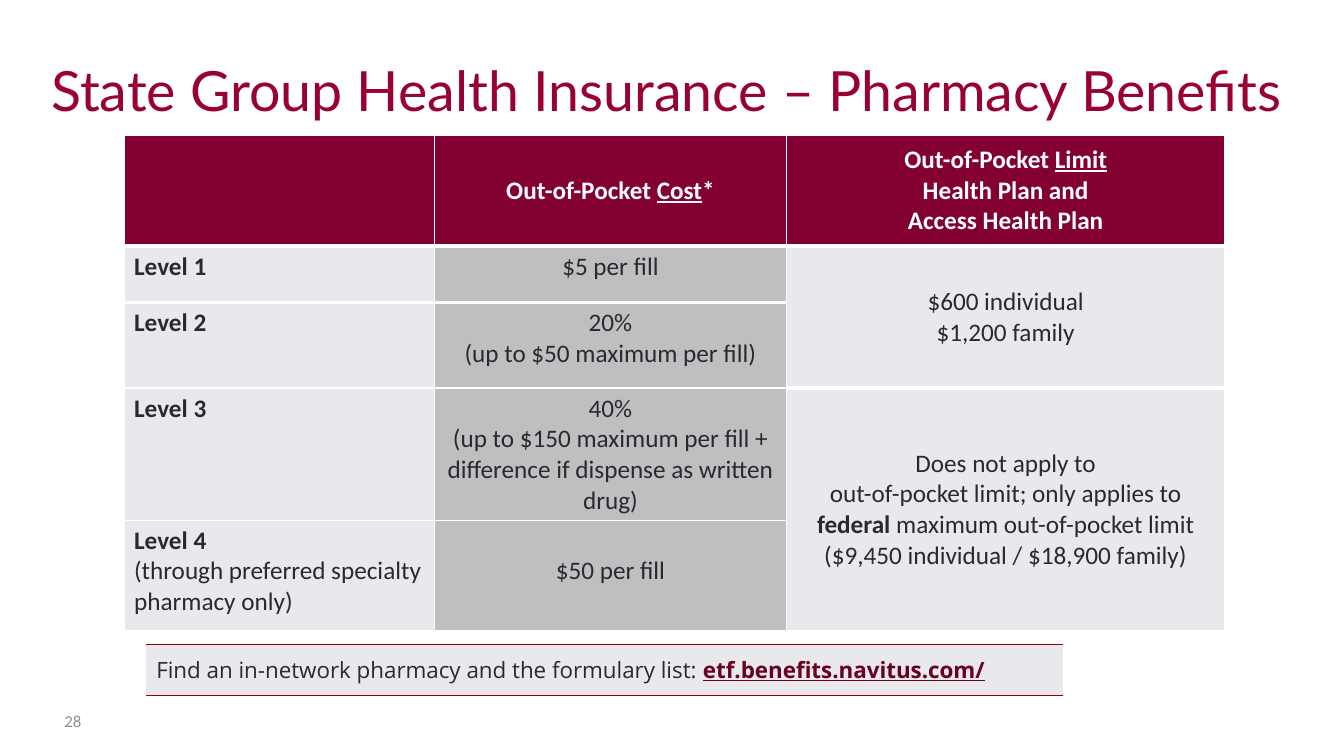
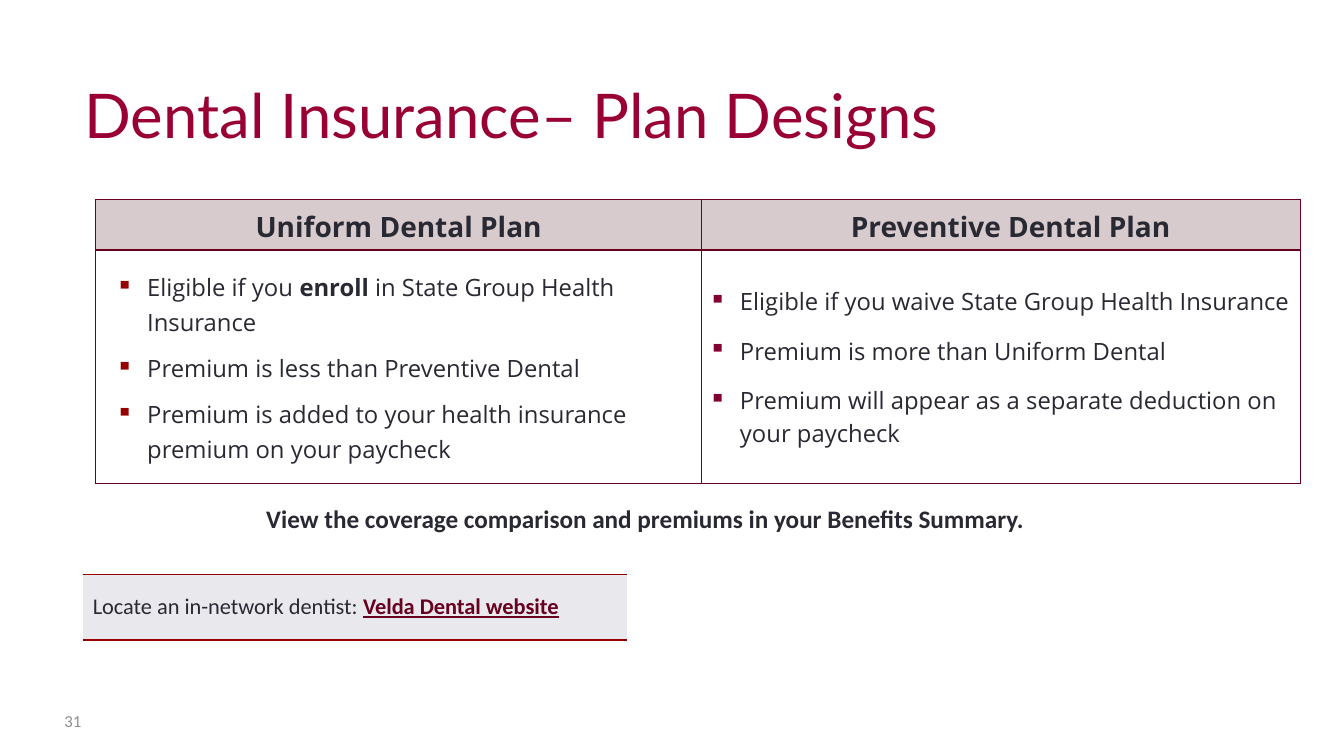
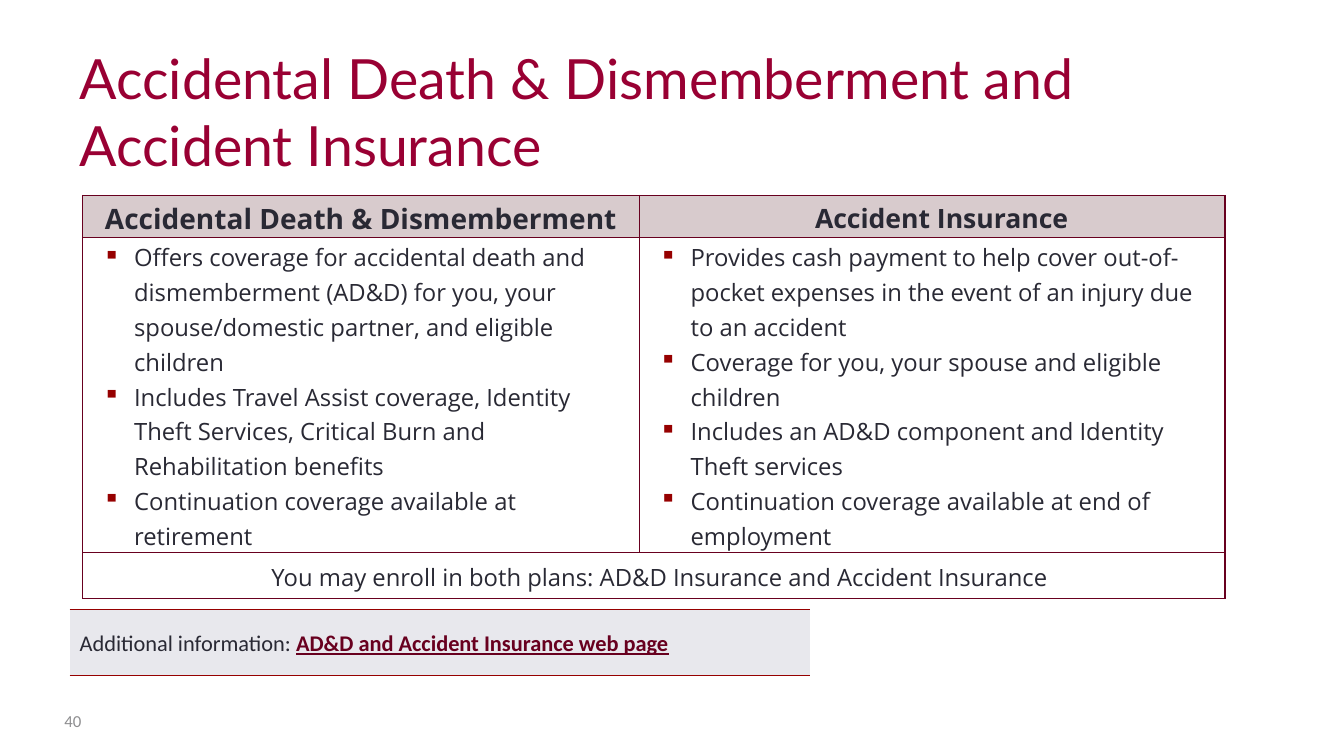
from lxml import etree
from pptx import Presentation
from pptx.dml.color import RGBColor
from pptx.enum.text import MSO_ANCHOR as Anchor, PP_ALIGN as Align
from pptx.oxml.ns import qn
from pptx.util import Inches, Pt

CRIMSON, MAROON, WINE, RED = "990033", "820032", "68001F", "960000"
INK, WHITE, PAGE_GRAY = "292934", "FFFFFF", "8E8E90"
PALE, MID_GRAY, ROSE = "E8E8ED", "BFBFBF", "D8CBCD"

# Text styles
TITLE = dict(font="Lato", size=39.6, color=CRIMSON, anchor=Anchor.BOTTOM)
PAGE_NUMBER = dict(font="Calibri", size=12, color=PAGE_GRAY, anchor=Anchor.MIDDLE)
NOTE = dict(font="Calibri", size=18, color=INK, bold=True, align=Align.CENTER)
BANNER = dict(font="Calibri", size=16, color=INK, fill=PALE, anchor=Anchor.MIDDLE)

LABEL = dict(font="Calibri", size=18, color=INK, fill=PALE)
LIMIT = dict(LABEL, align=Align.CENTER, anchor=Anchor.MIDDLE)
COST = dict(LABEL, align=Align.CENTER, fill=MID_GRAY)
COST_HEAD = dict(LIMIT, color=WHITE, fill=MAROON, bold=True)

PLAN = dict(font="Open Sans", size=17, color=INK, spacing=1.07,
            margins=(0.07, 0.01, 0.07, 0))
PLAN_HEAD = dict(PLAN, size=20, bold=True, fill=ROSE, align=Align.CENTER,
                 anchor=Anchor.MIDDLE)
RIGHT_HEAD = dict(PLAN_HEAD, indent=(0.19, 0))
BULLETS = dict(PLAN, indent=(0.44, -0.31), bullet=RED)
DENTAL_LEFT = dict(BULLETS, anchor=Anchor.MIDDLE, after=8)
DENTAL_RIGHT = dict(DENTAL_LEFT, indent=(0.31, -0.31), bullet=MAROON, spacing=1, after=12)
PLAN_FOOT = dict(PLAN, align=Align.CENTER, anchor=Anchor.MIDDLE, indent=(0.12, 0))

# A cell is (style, paragraphs); a paragraph is a string or a list of runs;
# a run is a string or (text, run style). None is a cell covered by a merge.
BOLD, UNDERLINE = dict(bold=True), dict(underline=True)
LINK = dict(bold=True, underline=True, color=WINE)

PHARMACY = [
    [(COST_HEAD, []),
     (COST_HEAD, [["Out-of-Pocket ", ("Cost", UNDERLINE), "*"]]),
     (COST_HEAD, [["Out-of-Pocket ", ("Limit", UNDERLINE)],
                  "Health Plan and", "Access Health Plan"])],
    [(LABEL, [[("Level 1", BOLD)]]),
     (COST, ["$5 per fill"]),
     (LIMIT, ["$600 individual", "$1,200 family"])],
    [(LABEL, [[("Level 2", BOLD)]]),
     (COST, ["20%", "(up to $50 maximum per fill)"]),
     None],
    [(LABEL, [[("Level 3", BOLD)]]),
     (dict(COST, anchor=Anchor.MIDDLE),
      ["40%", "(up to $150 maximum per fill + difference if dispense as written drug)"]),
     (LIMIT, ["Does not apply to",
              ["out-of-pocket limit; only applies to ", ("federal ", BOLD),
               "maximum out-of-pocket limit"],
              "($9,450 individual / $18,900 family)"])],
    [(LABEL, [[("Level 4", BOLD)], "(through preferred specialty pharmacy only)"]),
     (dict(COST, margins=(0.1, 0.35, 0.1, 0.05)), ["$50 per fill"]),
     None],
]

DENTAL = [
    [(PLAN_HEAD, ["Uniform Dental Plan"]), (RIGHT_HEAD, ["Preventive Dental Plan"])],
    [(DENTAL_LEFT, [
        ["Eligible if you ", ("enroll", BOLD), " in State Group Health Insurance"],
        "Premium is less than Preventive Dental",
        "Premium is added to your health insurance premium on your paycheck"]),
     (DENTAL_RIGHT, [
         "Eligible if you waive State Group Health Insurance",
         "Premium is more than Uniform Dental",
         "Premium will appear as a separate deduction on your paycheck"])],
]

ACCIDENT = [
    [(PLAN_HEAD, ["Accidental Death & Dismemberment"]),
     (dict(RIGHT_HEAD, size=19), ["Accident Insurance"])],
    [(BULLETS, [
        "Offers coverage for accidental death and dismemberment (AD&D) for you, "
        "your spouse/domestic partner, and eligible children",
        "Includes Travel Assist coverage, Identity Theft Services, Critical Burn "
        "and Rehabilitation benefits",
        "Continuation coverage available at retirement"]),
     (BULLETS, [
         "Provides cash payment to help cover out-of-pocket expenses in the event "
         "of an injury due to an accident",
         "Coverage for you, your spouse and eligible children",
         "Includes an AD&D component and Identity Theft services",
         "Continuation coverage available at end of employment"])],
    [(PLAN_FOOT, ["You may enroll in both plans: AD&D Insurance and Accident Insurance"]),
     None],
]

# Boxes are left, top, width, height; banners and tables are in inches.
SLIDES = [
    dict(number="28", title="State Group Health Insurance – Pharmacy Benefits",
         title_box=(0.41, 0.38, 12.56, 0.89),
         table=dict(rows=PHARMACY, at=(1.23, 1.34), widths=[3.08, 3.49, 4.35],
                    heights=[1.1, 0.56, 0.85, 1.31, 1.1], border=WHITE,
                    merges=[(1, 2, 2, 2), (3, 2, 4, 2)], thick_edges=(1, 2)),
         banner_box=(1.45, 6.39, 9.09, 0.51), banner_style=dict(font="Open Sans"),
         banner=["Find an in-network pharmacy and the formulary list: ",
                 ("etf.benefits.navitus.com/", LINK)]),
    dict(number="31", title="Dental Insurance– Plan Designs",
         title_box=(0.74, 0.3, 11.94, 1.25), title_style=dict(size=44),
         table=dict(rows=DENTAL, at=(0.95, 1.98), widths=[6.01, 5.94],
                    heights=[0.5, 2.32], border=WINE),
         banner_box=(0.82, 5.7, 5.4, 0.65),
         banner=["Locate an in-network dentist: ", ("Velda Dental website", LINK)],
         note="View the coverage comparison and premiums in your Benefits Summary."),
    dict(number="40", title="Accidental Death & Dismemberment and Accident Insurance",
         title_box=(0.69, 0.56, 11.94, 1.25),
         table=dict(rows=ACCIDENT, at=(0.82, 1.94), widths=[5.52, 5.81],
                    heights=[0.42, 3.12, 0.46], border=WINE, merges=[(2, 0, 2, 1)]),
         banner_box=(0.69, 6.05, 7.34, 0.65), banner_style=dict(spacing=1.1),
         banner=["Additional information: ",
                 ("AD&D and Accident Insurance web page", LINK)]),
]
NUMBER_BOX = (0.54, 6.95, 0.56, 0.4)
NOTE_BOX = (0.74, 4.94, 11.32, 0.4)


def rgb(color):
    return RGBColor.from_string(color)


def style_font(font, style):
    if "font" in style:
        font.name = style["font"]
    if "size" in style:
        font.size = Pt(style["size"])
    if "color" in style:
        font.color.rgb = rgb(style["color"])
    if "bold" in style:
        font.bold = style["bold"]
    if "underline" in style:
        font.underline = style["underline"]


def add_bullet(properties, color):
    bullet_color = etree.SubElement(properties, qn("a:buClr"))
    etree.SubElement(bullet_color, qn("a:srgbClr"), val=color)
    etree.SubElement(properties, qn("a:buChar"), char="▪")


def write_text(frame, paragraphs, style):
    for index, runs in enumerate(paragraphs):
        paragraph = frame.paragraphs[0] if index == 0 else frame.add_paragraph()
        paragraph.alignment = style.get("align", Align.LEFT)
        paragraph.line_spacing = style.get("spacing", 1.0)
        paragraph.space_after = Pt(style.get("after", 0))
        properties = paragraph._p.get_or_add_pPr()
        if "indent" in style:
            left, first = style["indent"]
            properties.set("marL", str(Inches(left)))
            properties.set("indent", str(Inches(first)))
        if "bullet" in style:
            add_bullet(properties, style["bullet"])
        style_font(paragraph.font, style)
        for item in [runs] if isinstance(runs, str) else runs:
            text, run_style = (item, {}) if isinstance(item, str) else item
            run = paragraph.add_run()
            run.text = text
            style_font(run.font, run_style)


def add_text(slide, box, text, style):
    frame = slide.shapes.add_textbox(*map(Inches, box)).text_frame
    frame.word_wrap = True
    frame.vertical_anchor = style.get("anchor", Anchor.TOP)
    write_text(frame, [text], style)


def set_borders(cell, borders):
    """Draw the sides in borders, {side: (color, points)}, and hide the others."""
    properties = cell._tc.get_or_add_tcPr()
    for side in "LRTB":
        color, points = borders.get(side, (None, 0))
        line = etree.SubElement(properties, qn(f"a:ln{side}"), w=str(Pt(points)))
        if color:
            fill = etree.SubElement(line, qn("a:solidFill"))
            etree.SubElement(fill, qn("a:srgbClr"), val=color)
        else:
            etree.SubElement(line, qn("a:noFill"))


def fill_cell(cell, content):
    style, paragraphs = content or ({}, [])
    if "fill" in style:
        cell.fill.solid()
        cell.fill.fore_color.rgb = rgb(style["fill"])
    else:
        cell.fill.background()
    cell.vertical_anchor = style.get("anchor", Anchor.TOP)
    margins = style.get("margins", (0.1, 0.05, 0.1, 0.05))
    (cell.margin_left, cell.margin_top,
     cell.margin_right, cell.margin_bottom) = map(Inches, margins)
    write_text(cell.text_frame, paragraphs, style)


def add_table(slide, rows, at, widths, heights, border, merges=(), thick_edges=(),
              sides="LRTB"):
    """Add a table; thick_edges numbers the row edges, from 0 at the top, drawn at 3 pt."""
    box = (*at, sum(widths), sum(heights))
    table = slide.shapes.add_table(len(rows), len(widths), *map(Inches, box)).table
    table.first_row = table.horz_banding = False
    for column, width in zip(table.columns, widths):
        column.width = Inches(width)
    for row, height in zip(table.rows, heights):
        row.height = Inches(height)
    for row_index, row in enumerate(rows):
        edges = {"T": row_index, "B": row_index + 1}
        borders = {side: (border, 3 if edges.get(side) in thick_edges else 1)
                   for side in sides}
        for column_index, content in enumerate(row):
            cell = table.cell(row_index, column_index)
            set_borders(cell, borders)
            fill_cell(cell, content)
    for top, left, bottom, right in merges:
        table.cell(top, left).merge(table.cell(bottom, right))


def add_banner(slide, box, runs, style):
    left, top, width, height = box
    add_table(slide, [[(style, [runs])]], (left, top), [width], [height], RED, sides="TB")


def build_slide(presentation, content):
    slide = presentation.slides.add_slide(presentation.slide_layouts[6])
    title_style = dict(TITLE, **content.get("title_style", {}))
    add_text(slide, content["title_box"], content["title"], title_style)
    add_text(slide, NUMBER_BOX, content["number"], PAGE_NUMBER)
    add_table(slide, **content["table"])
    banner_style = dict(BANNER, **content.get("banner_style", {}))
    add_banner(slide, content["banner_box"], content["banner"], banner_style)
    if "note" in content:
        add_text(slide, NOTE_BOX, content["note"], NOTE)


def main():
    presentation = Presentation()
    presentation.slide_width = Inches(13.33)
    presentation.slide_height = Inches(7.5)
    for content in SLIDES:
        build_slide(presentation, content)
    presentation.save("out.pptx")


if __name__ == "__main__":
    main()
